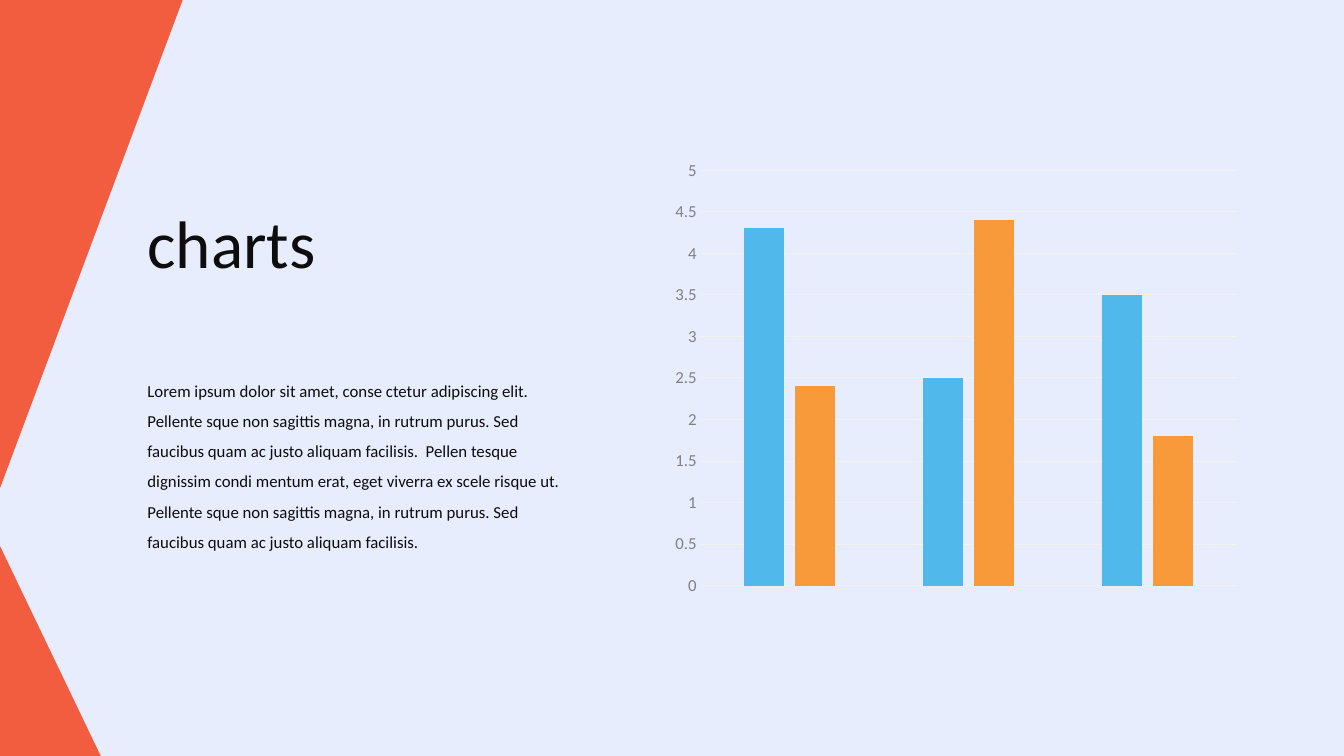
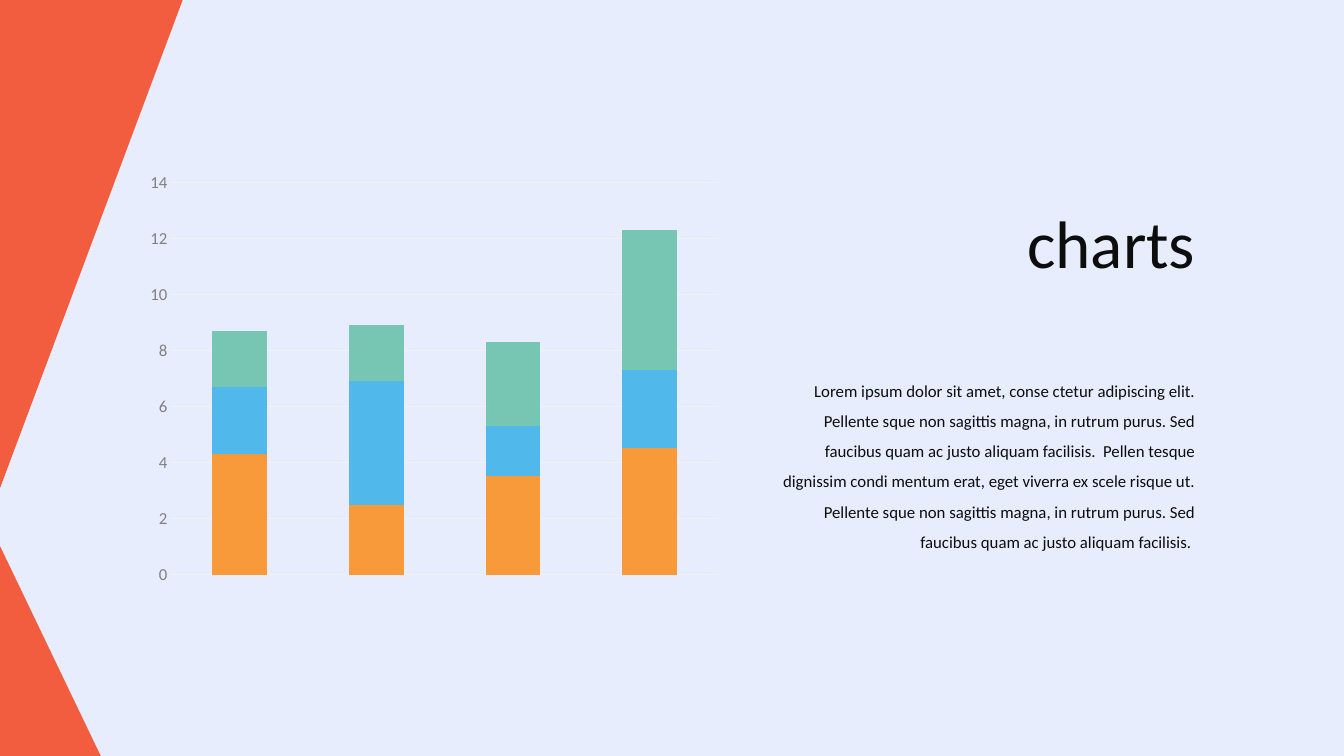
import dataclasses

import pptx
import pptx.chart.data
import pptx.dml.color
import pptx.enum.chart
import pptx.enum.shapes
import pptx.enum.text
import pptx.util

PX = 9525
KIND = pptx.enum.chart.XL_CHART_TYPE
ALIGN = pptx.enum.text.PP_ALIGN


@dataclasses.dataclass(frozen=True)
class Theme:
    font: str = "Calibri"
    back: str = "E7EDFD"
    band: str = "F25D3F"
    ink: str = "0D0D0D"
    black: str = "000000"
    label: str = "808080"
    grid: str = "F2F2F2"
    blue: str = "51B8EB"
    gold: str = "F89A3A"
    green: str = "77C6B4"
    title: int = 48
    body: int = 12
    tick: int = 12
    base: int = 10


THEME = Theme()
BODY = (
    "Lorem ipsum dolor sit amet, conse ctetur adipiscing elit. "
    "Pellente sque non sagittis magna, in rutrum purus. "
    "Sed faucibus quam ac justo aliquam facilisis.  "
    "Pellen tesque dignissim condi mentum erat, eget viverra ex scele risque ut. "
    "Pellente sque non sagittis magna, in rutrum purus. "
    "Sed faucibus quam ac justo aliquam facilisis."
)


def scale(*sizes):
    return [pptx.util.Emu(size * PX) for size in sizes]


def paint(fill, color):
    fill.solid()
    fill.fore_color.rgb = pptx.dml.color.RGBColor.from_string(color)


def style(font, size, color):
    font.name = THEME.font
    font.size = pptx.util.Pt(size)
    font.color.rgb = pptx.dml.color.RGBColor.from_string(color)


def add_wedge(slide, box, flip=False):
    kind = pptx.enum.shapes.MSO_SHAPE.RIGHT_TRIANGLE
    wedge = slide.shapes.add_shape(kind, *scale(*box))
    wedge.shadow.inherit = False
    paint(wedge.fill, THEME.band)
    wedge.line.fill.background()
    if flip:
        wedge.rotation = 180
        wedge.element.spPr.xfrm.set("flipH", "1")


def add_side(slide, box):
    left, top, width, height = box
    add_wedge(slide, (left, top + height - 200, 96, 200))
    add_wedge(slide, (left, top, width, 465), flip=True)


def add_text(slide, box, text, size, align, space=None):
    frame = slide.shapes.add_textbox(*scale(*box)).text_frame
    frame.word_wrap = True
    frame.auto_size = pptx.enum.text.MSO_AUTO_SIZE.SHAPE_TO_FIT_TEXT
    line = frame.paragraphs[0]
    line.text = text
    line.alignment = align
    line.line_spacing = space
    style(line.font, size, THEME.ink)


def add_panel(slide, box, text, align):
    left, top, width, height = box
    wide = 316
    shift = width - wide if align == ALIGN.RIGHT else 0
    add_text(slide, (left + shift, top, wide, 87), "charts", THEME.title, align)
    drop = 161
    add_text(slide, (left, top + drop, width, height - drop), text,
             THEME.body, align, 1.5)


def add_bars(slide, box, kind, rows, gap, lap, peak, step):
    data = pptx.chart.data.CategoryChartData()
    count = len(rows[0][0])
    data.categories = [str(num) for num in range(1, count + 1)]
    for num, (vals, color) in enumerate(rows, 1):
        data.add_series(f"Series {num}", vals)
    chart = slide.shapes.add_chart(kind, *scale(*box), data).chart
    chart.has_title = False
    chart.has_legend = False
    style(chart.font, THEME.base, THEME.black)
    plot = chart.plots[0]
    plot.vary_by_categories = False
    plot.gap_width = gap
    plot.overlap = lap
    for bars, (vals, color) in zip(plot.series, rows):
        bars.invert_if_negative = False
        paint(bars.format.fill, color)
    chart.category_axis.visible = False
    axis = chart.value_axis
    axis.minimum_scale = 0
    axis.maximum_scale = peak
    axis.major_unit = step
    axis.major_tick_mark = pptx.enum.chart.XL_TICK_MARK.NONE
    axis.minor_tick_mark = pptx.enum.chart.XL_TICK_MARK.NONE
    axis.format.line.fill.background()
    style(axis.tick_labels.font, THEME.tick, THEME.label)
    axis.has_major_gridlines = True
    grid = axis.major_gridlines.format.line
    grid.width = pptx.util.Pt(0.75)
    paint(grid.fill, THEME.grid)


def new_slide(deck):
    slide = deck.slides.add_slide(deck.slide_layouts[6])
    add_side(slide, (0, 0, 174, 720))
    return slide


def group_slide(deck):
    slide = new_slide(deck)
    add_panel(slide, (131, 187, 424, 342), BODY, ALIGN.LEFT)
    rows = [
        ((4.3, 2.5, 3.5), THEME.blue),
        ((2.4, 4.4, 1.8), THEME.gold),
    ]
    add_bars(slide, (632, 144, 557, 432), KIND.COLUMN_CLUSTERED, rows,
             gap=219, lap=-27, peak=5, step=0.5)


def stack_slide(deck):
    slide = new_slide(deck)
    rows = [
        ((4.3, 2.5, 3.5, 4.5), THEME.gold),
        ((2.4, 4.4, 1.8, 2.8), THEME.blue),
        ((2, 2, 3, 5), THEME.green),
    ]
    add_bars(slide, (132, 156, 563, 409), KIND.COLUMN_STACKED, rows,
             gap=150, lap=100, peak=14, step=2)
    add_panel(slide, (724, 187, 424, 342), BODY + " ", ALIGN.RIGHT)


def main():
    deck = pptx.Presentation()
    deck.slide_width, deck.slide_height = scale(1280, 720)
    paint(deck.slide_master.background.fill, THEME.back)
    group_slide(deck)
    stack_slide(deck)
    deck.save("out.pptx")


if __name__ == "__main__":
    main()
